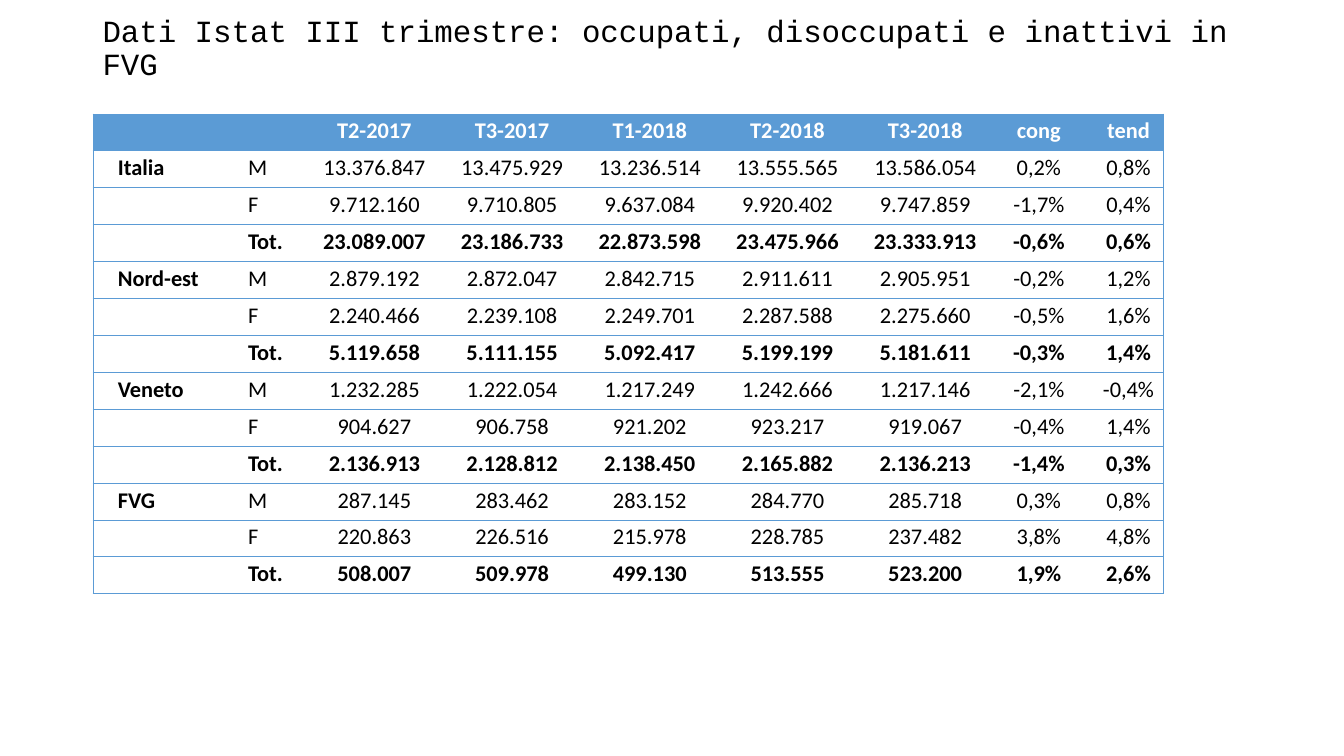
from dataclasses import dataclass

from lxml import etree
from pptx import Presentation
from pptx import util as u
from pptx.dml.color import RGBColor
from pptx.enum import text
from pptx.oxml.ns import qn


@dataclass(frozen=True)
class Theme:
    """Colours, fonts and type sizes of the slide."""
    blue: str = "5B9BD5"
    white: str = "FFFFFF"
    black: str = "000000"
    title_font: str = "Courier New"
    table_font: str = "Calibri"
    title_size: u.Pt = u.Pt(22)
    table_size: u.Pt = u.Pt(16)
    line_spacing: u.Pt = u.Pt(18)
    border: u.Pt = u.Pt(0.5)


TITLE = "Dati Istat III trimestre: occupati, disoccupati e inattivi in FVG"
HEADER = ["", "", "T2-2017", "T3-2017", "T1-2018", "T2-2018", "T3-2018", "cong", "tend"]
SEXES = ["M", "F", "Tot."]
REGIONS = {
    "Italia": [
        "13.376.847 13.475.929 13.236.514 13.555.565 13.586.054 0,2% 0,8%",
        "9.712.160 9.710.805 9.637.084 9.920.402 9.747.859 -1,7% 0,4%",
        "23.089.007 23.186.733 22.873.598 23.475.966 23.333.913 -0,6% 0,6%",
    ],
    "Nord-est": [
        "2.879.192 2.872.047 2.842.715 2.911.611 2.905.951 -0,2% 1,2%",
        "2.240.466 2.239.108 2.249.701 2.287.588 2.275.660 -0,5% 1,6%",
        "5.119.658 5.111.155 5.092.417 5.199.199 5.181.611 -0,3% 1,4%",
    ],
    "Veneto": [
        "1.232.285 1.222.054 1.217.249 1.242.666 1.217.146 -2,1% -0,4%",
        "904.627 906.758 921.202 923.217 919.067 -0,4% 1,4%",
        "2.136.913 2.128.812 2.138.450 2.165.882 2.136.213 -1,4% 0,3%",
    ],
    "FVG": [
        "287.145 283.462 283.152 284.770 285.718 0,3% 0,8%",
        "220.863 226.516 215.978 228.785 237.482 3,8% 4,8%",
        "508.007 509.978 499.130 513.555 523.200 1,9% 2,6%",
    ],
}
COLUMN_WIDTHS = [3.28, 1.83] + [3.47] * 5 + [2.26] * 2
ROW_HEIGHT = 0.93


def apply(target, values):
    """Set each attribute named in a dict of format values."""
    for name, value in values.items():
        setattr(target, name, value)


class SlideBuilder:
    """Hold the theme and the current slide, and add its elements."""

    def __init__(self, presentation, theme):
        """Start a slide on the title-only layout."""
        self.theme = theme
        self.slide = presentation.slides.add_slide(presentation.slide_layouts[5])

    def fill_paragraph(self, paragraph, words, color, font, paragraph_format):
        """Put one formatted run in a paragraph."""
        apply(paragraph, paragraph_format)
        if words:
            run = paragraph.add_run()
            run.text = words
            apply(run.font, font)
            run.font.color.rgb = RGBColor.from_string(color)

    def title(self, words, left, top, width, height):
        """Place and format the title placeholder."""
        title = self.slide.shapes.title
        apply(title, {"left": u.Cm(left), "top": u.Cm(top),
                      "width": u.Cm(width), "height": u.Cm(height)})
        apply(title.text_frame, {"word_wrap": True, "auto_size": text.MSO_AUTO_SIZE.NONE,
                                 "vertical_anchor": text.MSO_ANCHOR.MIDDLE})
        self.fill_paragraph(
            title.text_frame.paragraphs[0], words, self.theme.black,
            {"name": self.theme.title_font, "size": self.theme.title_size},
            {"alignment": text.PP_ALIGN.LEFT, "line_spacing": 0.9})

    def borders(self, cell, sides):
        """Draw the named sides of a cell and clear the others."""
        properties = cell._tc.get_or_add_tcPr()
        for side in "LRTB":
            line = etree.SubElement(properties, qn(f"a:ln{side}"), w=str(self.theme.border))
            if side in sides:
                fill = etree.SubElement(line, qn("a:solidFill"))
                etree.SubElement(fill, qn("a:srgbClr"), val=self.theme.blue)
            else:
                etree.SubElement(line, qn("a:noFill"))

    def cell(self, cell, words, color, fill, bold, alignment, sides):
        """Format and fill one table cell."""
        apply(cell, {"margin_left": u.Cm(0.13), "margin_right": u.Cm(0.13),
                     "margin_top": 0, "margin_bottom": 0,
                     "vertical_anchor": text.MSO_ANCHOR.MIDDLE})
        self.borders(cell, sides)
        cell.fill.solid()
        cell.fill.fore_color.rgb = RGBColor.from_string(fill)
        paragraph = cell.text_frame.paragraphs[0]
        self.fill_paragraph(
            paragraph, words, color,
            {"name": self.theme.table_font, "size": self.theme.table_size, "bold": bold},
            {"alignment": alignment, "line_spacing": self.theme.line_spacing})
        properties = paragraph._p.get_or_add_pPr()
        properties.set("marL", "0")
        properties.set("indent", str(u.Cm(0.5)))

    def table(self, rows, left, top, widths, row_height):
        """Add a table with a filled header and ruled rows."""
        frame = self.slide.shapes.add_table(len(rows), len(widths), u.Cm(left), u.Cm(top),
                                            u.Cm(sum(widths)), u.Cm(row_height * len(rows)))
        table = frame.table
        table.horz_banding = False
        for column, width in zip(table.columns, widths):
            column.width = u.Cm(width)
        last = len(widths) - 1
        for r, row in enumerate(rows):
            table.rows[r].height = u.Cm(row_height)
            header = r == 0
            for c, words in enumerate(row):
                self.cell(
                    table.cell(r, c), words,
                    color=self.theme.white if header else self.theme.black,
                    fill=self.theme.blue if header else self.theme.white,
                    bold=header or c == 0 or row[1] == "Tot.",
                    alignment=text.PP_ALIGN.LEFT if c < 2 else text.PP_ALIGN.CENTER,
                    sides="TB" + "L" * (c == 0) + "R" * (c == last))


def main():
    """Build the employment slide and save it."""
    presentation = Presentation()
    apply(presentation, {"slide_width": u.Cm(33.87), "slide_height": u.Cm(19.05)})
    builder = SlideBuilder(presentation, Theme())
    builder.title(TITLE, 2.33, 0.46, 29.21, 1.57)
    rows = [HEADER] + [
        [region if sex == "M" else "", sex, *figures.split()]
        for region, lines in REGIONS.items()
        for sex, figures in zip(SEXES, lines)]
    builder.table(rows, 2.34, 2.87, COLUMN_WIDTHS, ROW_HEIGHT)
    presentation.save("out.pptx")


if __name__ == "__main__":
    main()
